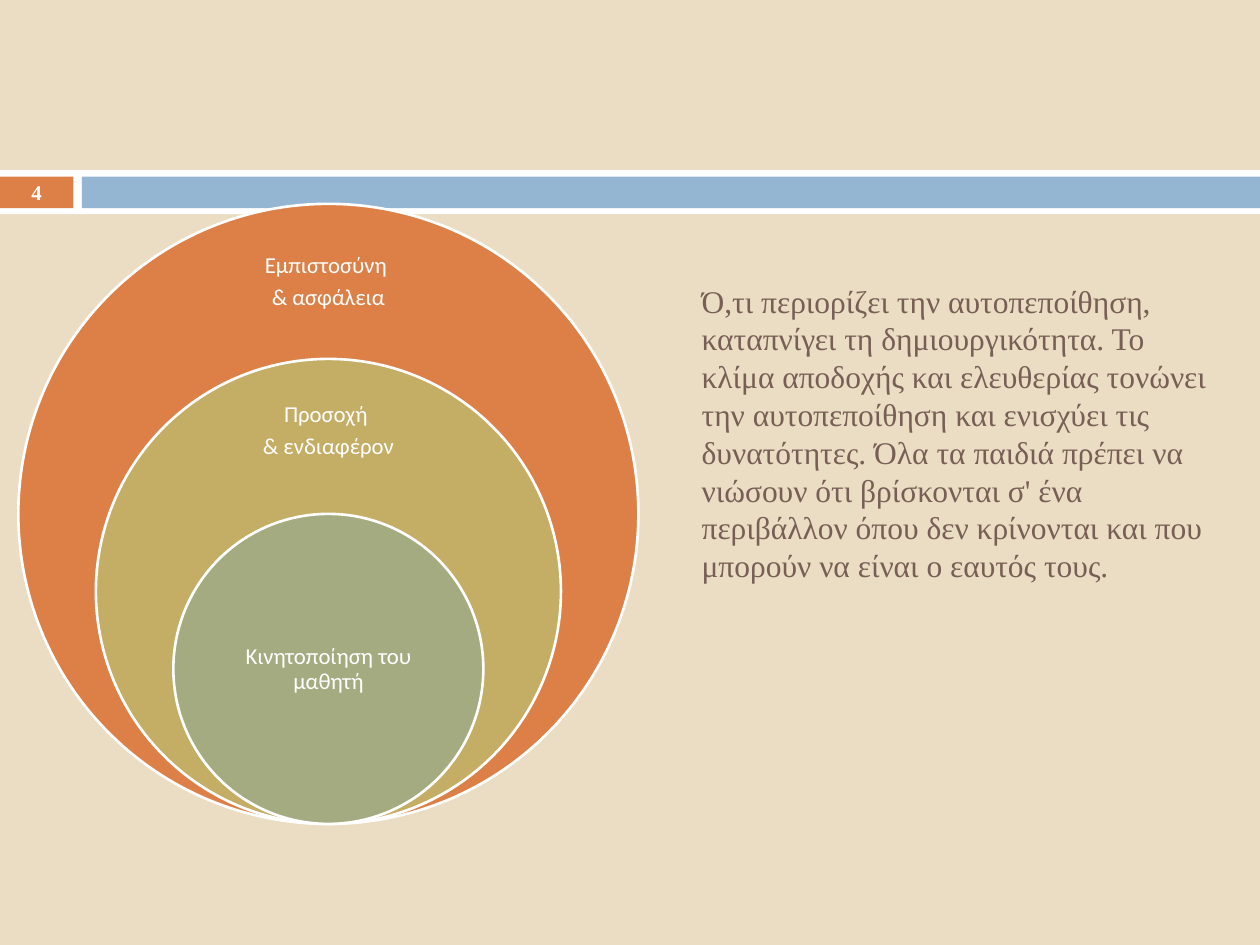
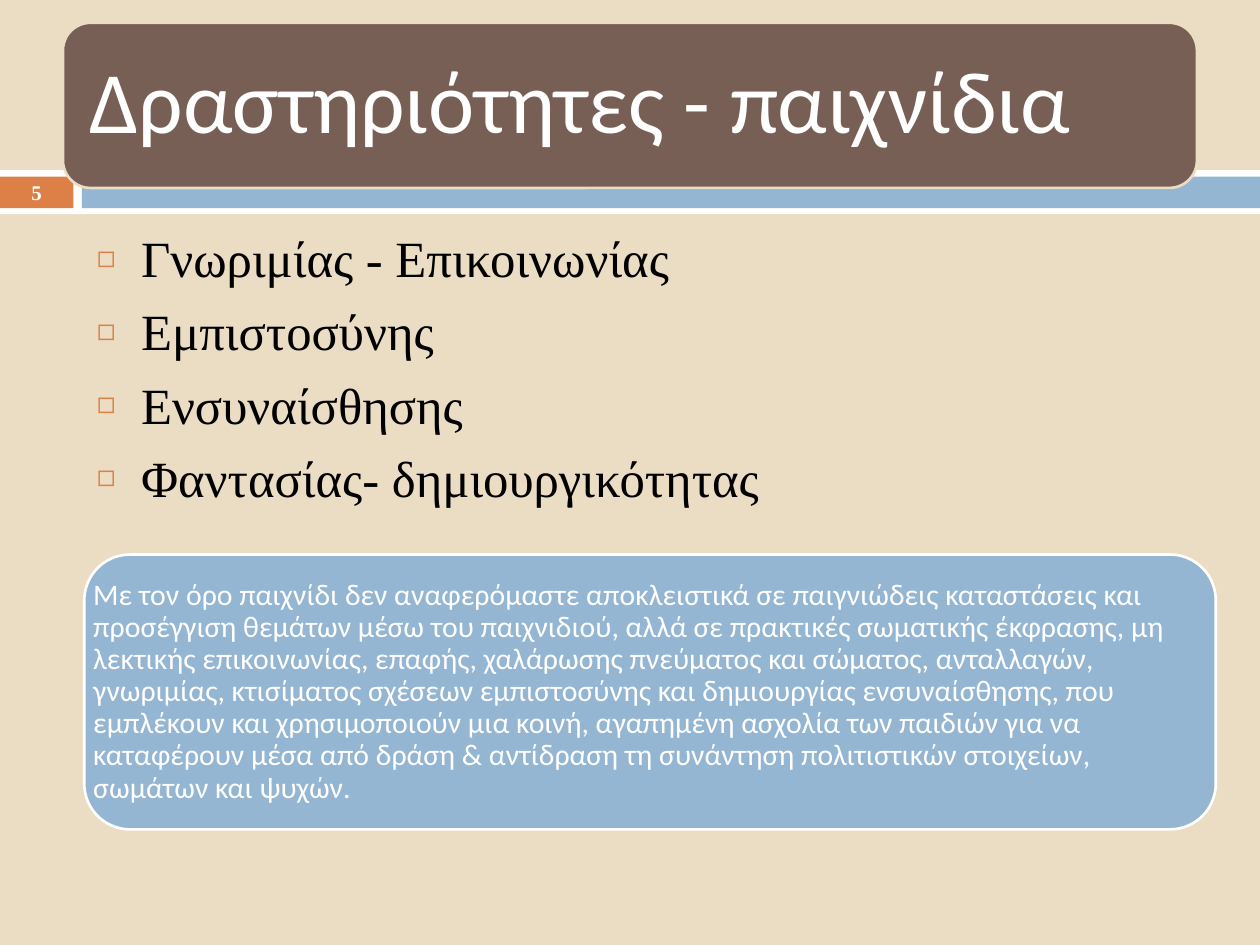
from lxml.etree import SubElement
from pptx import Presentation
from pptx.dml.color import RGBColor
from pptx.enum.shapes import MSO_SHAPE as Preset
from pptx.enum.text import MSO_ANCHOR as Anchor, MSO_AUTO_SIZE as AutoSize, PP_ALIGN as Align
from pptx.oxml.ns import qn
from pptx.util import Cm, Pt

SAND, WHITE, BLACK = "EBDDC3", "FFFFFF", "000000"
ORANGE, BLUE, BROWN = "DD8047", "94B6D2", "775F55"
GOLD, SAGE = "C4AD64", "A5AB81"
SERIF, SANS = "Times New Roman", "Calibri"
hex_colour = RGBColor.from_string


def add_figure(slide, preset, box, fill, line=None):
    shape = slide.shapes.add_shape(preset, *map(Cm, box))
    shape.shadow.inherit = False
    shape.fill.solid()
    shape.fill.fore_color.rgb = hex_colour(fill)
    if line:
        shape.line.color.rgb = hex_colour(line)
        shape.line.width = Pt(1.5)
    else:
        shape.line.fill.background()
    return shape


def write_text(shape, box, lines, size, font, colour, align=Align.LEFT,
               anchor=Anchor.MIDDLE, inset=None, spacing=0.9, after=0.35, bold=False):
    shape.left, shape.top, shape.width, shape.height = map(Cm, box)
    frame = shape.text_frame
    frame.word_wrap = True
    frame.auto_size = AutoSize.NONE
    frame.vertical_anchor = anchor
    if inset is not None:
        frame.margin_left = frame.margin_right = Cm(inset)
        frame.margin_top = frame.margin_bottom = Cm(inset)
    for index, line in enumerate(lines):
        paragraph = frame.add_paragraph() if index else frame.paragraphs[0]
        paragraph.alignment = align
        paragraph.line_spacing = spacing
        paragraph.space_before = Pt(0)
        paragraph.space_after = Pt(size * after)
        run = paragraph.add_run()
        run.text = line
        run.font.size = Pt(size)
        run.font.name = font
        run.font.bold = bold
        run.font.color.rgb = hex_colour(colour)


presentation = Presentation()
presentation.slide_width, presentation.slide_height = Cm(25.4), Cm(19.05)
master = presentation.slide_master
master.background.fill.solid()
master.background.fill.fore_color.rgb = hex_colour(SAND)
climate_slide = presentation.slides.add_slide(presentation.slide_layouts[5])
games_slide = presentation.slides.add_slide(presentation.slide_layouts[1])

for box, fill in [
    ((0, 3.43, 25.4, 0.89), WHITE),
    ((0, 3.56, 1.48, 0.64), ORANGE),
    ((1.65, 3.56, 23.75, 0.64), BLUE),
]:
    band = add_figure(climate_slide, Preset.RECTANGLE, box, fill)
    master.shapes.element.append(band.element)

write_text(
    climate_slide.shapes.title, (13.89, 4.93, 11.05, 7.59),
    ["Ό,τι περιορίζει την αυτοπεποίθηση, καταπνίγει τη δημιουργικότητα. "
     "Το κλίμα αποδοχής και ελευθερίας τονώνει την αυτοπεποίθηση και ενισχύει τις "
     "δυνατότητες. Όλα τα παιδιά πρέπει να νιώσουν ότι βρίσκονται σ' ένα περιβάλλον "
     "όπου δεν κρίνονται και που μπορούν να είναι ο εαυτός τους."],
    18, SERIF, BROWN, spacing=1, after=0)

centre, bottom, outer_diameter = 6.62, 16.61, 12.5
for scale, fill, label_top, label_height, lines in [
    (1, ORANGE, 4.75, 1.88, ["Εμπιστοσύνη ", "& ασφάλεια"]),
    (0.75, GOLD, 7.82, 1.75, ["Προσοχή ", "& ενδιαφέρον"]),
    (0.5, SAGE, 11.94, 3.12, ["Κινητοποίηση του μαθητή"]),
]:
    diameter = outer_diameter * scale
    add_figure(climate_slide, Preset.OVAL,
               (centre - diameter / 2, bottom - diameter, diameter, diameter), fill, WHITE)
    label_box = (centre - 2.2, label_top, 4.4, label_height)
    label = climate_slide.shapes.add_textbox(*map(Cm, label_box))
    write_text(label, label_box, lines, 13, SANS, WHITE, Align.CENTER, inset=0.25)

activities = games_slide.placeholders[1]
write_text(
    activities, (1.7, 4.45, 22.66, 12.5),
    ["Γνωριμίας - Επικοινωνίας", "Εμπιστοσύνης", "Ενσυναίσθησης",
     "Φαντασίας- δημιουργικότητας"],
    29, SERIF, BLACK, anchor=Anchor.TOP, spacing=1, after=0)
for paragraph in activities.text_frame.paragraphs:
    paragraph.space_before = Pt(7)
    properties = paragraph._p.get_or_add_pPr()
    properties.set("marL", str(Cm(0.89)))
    properties.set("indent", str(-Cm(0.89)))
    bullet_colour = SubElement(properties, qn("a:buClr"))
    SubElement(bullet_colour, qn("a:srgbClr"), val=ORANGE)
    SubElement(properties, qn("a:buSzPct"), val="60000")
    SubElement(properties, qn("a:buChar"), char="◻")

heading_box = (1.27, 0.46, 22.86, 3.33)
add_figure(games_slide, Preset.ROUNDED_RECTANGLE, heading_box, BROWN, SAND)
heading = games_slide.shapes.title
games_slide.shapes.element.append(heading.element)
write_text(heading, heading_box, ["Δραστηριότητες - παιχνίδια"], 50, SANS, WHITE, inset=0.53)

definition_box = (1.7, 11.18, 22.81, 5.54)
add_figure(games_slide, Preset.ROUNDED_RECTANGLE, definition_box, BLUE, WHITE)
definition = games_slide.shapes.add_textbox(*map(Cm, definition_box))
write_text(
    definition, definition_box,
    ["Με τον όρο παιχνίδι δεν αναφερόμαστε αποκλειστικά σε παιγνιώδεις καταστάσεις και "
     "προσέγγιση θεμάτων μέσω του παιχνιδιού, αλλά σε πρακτικές σωματικής έκφρασης, μη "
     "λεκτικής επικοινωνίας, επαφής, χαλάρωσης πνεύματος και σώματος, ανταλλαγών, "
     "γνωριμίας, κτισίματος σχέσεων εμπιστοσύνης και δημιουργίας ενσυναίσθησης, που "
     "εμπλέκουν και χρησιμοποιούν μια κοινή, αγαπημένη ασχολία των παιδιών για να "
     "καταφέρουν μέσα από δράση & αντίδραση τη συνάντηση πολιτιστικών στοιχείων, "
     "σωμάτων και ψυχών."],
    17, SANS, WHITE, inset=0.18)

number_box = (0, 3.53, 1.48, 0.69)
for number, slide in enumerate(presentation.slides, start=4):
    page_number = slide.shapes.add_textbox(*map(Cm, number_box))
    write_text(page_number, number_box, [str(number)], 11.9, SERIF, WHITE, Align.CENTER,
               spacing=1, after=0, bold=True)

presentation.save("out.pptx")
